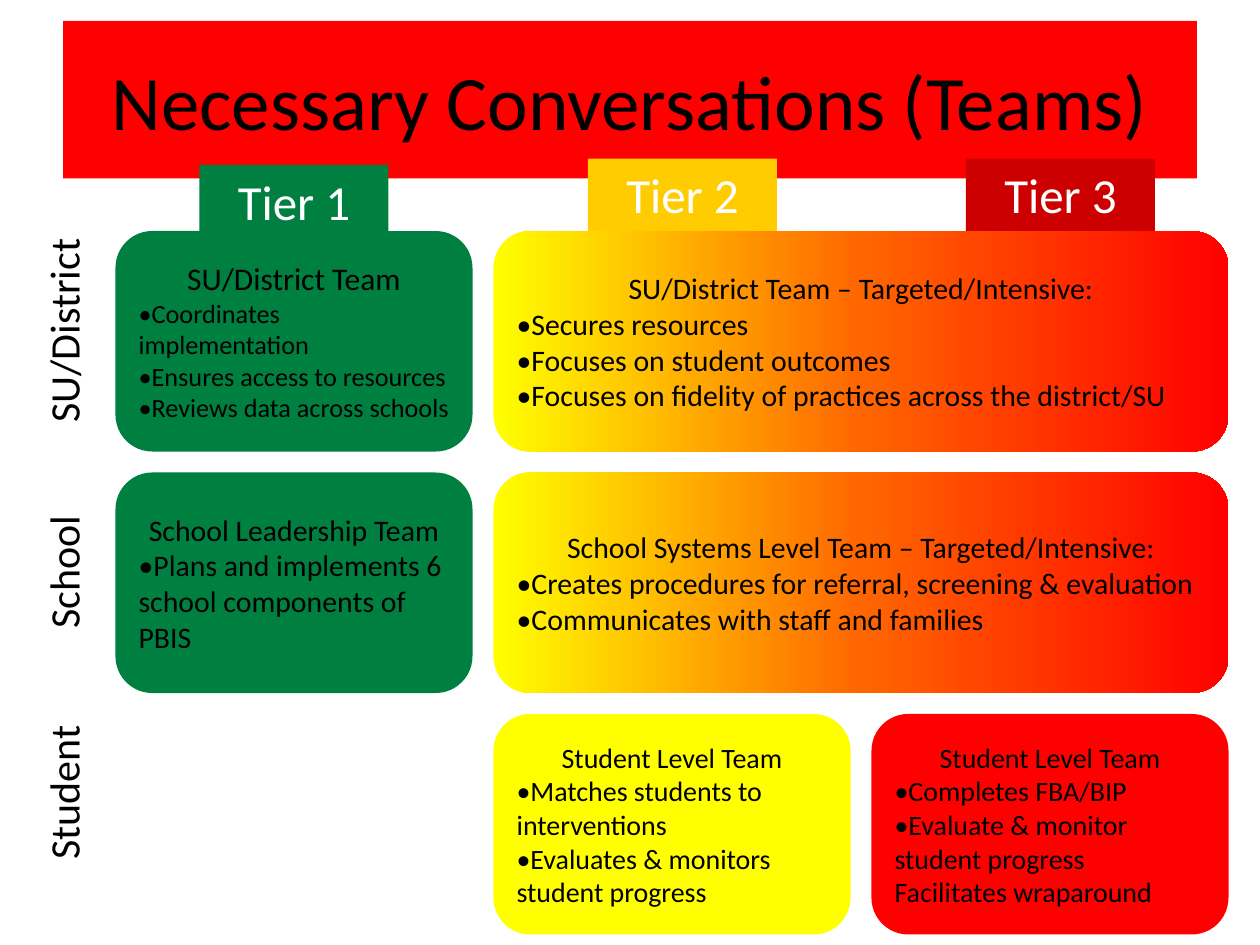
import copy

import pptx
import pptx.util
import pptx.dml.color
import pptx.enum.shapes
import pptx.enum.text
import pptx.oxml.ns

PX = 914400 // 120
FONT = "Calibri"
HUES = {
    "black": "000000", "white": "FFFFFF", "green": "008040", "gold": "FFCC00",
    "crimson": "CC0000", "yellow": "FFFF00", "orange": "FF6600", "red": "FF0000",
}
BLEND = ("yellow", "orange", "red")
KIND = pptx.enum.shapes.MSO_SHAPE
ALIGN = pptx.enum.text.PP_ALIGN
ANCHOR = pptx.enum.text.MSO_ANCHOR
FIT = pptx.enum.text.MSO_AUTO_SIZE

LEFT, TOP = 110, 220
WIDE, HIGH, GAP = 340, 210, 20

# Tab left, tab top, name, fill
TIERS = [
    (920, 151, "Tier 3", "crimson"),
    (560, 151, "Tier 2", "gold"),
    (190, 157, "Tier 1", "green"),
]
LEVELS = [(315, "SU/District"), (545, "School"), (755, "Student")]
# Column, row, columns covered, fill, head size, body size, lines
TEAMS = [
    (0, 0, 1, "green", 18, 15, [
        "SU/District Team", "•Coordinates implementation",
        "•Ensures access to resources", "•Reviews data across schools"]),
    (1, 0, 2, BLEND, 17, 17, [
        "SU/District Team – Targeted/Intensive:", "•Secures resources",
        "•Focuses on student outcomes",
        "•Focuses on fidelity of practices across the district/SU"]),
    (0, 1, 1, "green", 17, 17, [
        "School Leadership Team",
        "•Plans and implements 6 school components of PBIS"]),
    (1, 1, 2, BLEND, 17, 17, [
        "School Systems Level Team – Targeted/Intensive:",
        "•Creates procedures for referral, screening & evaluation",
        "•Communicates with staff and families"]),
    (1, 2, 1, "yellow", 16, 16, [
        "Student Level Team", "•Matches students to interventions",
        "•Evaluates & monitors student progress"]),
    (2, 2, 1, "red", 16, 16, [
        "Student Level Team", "•Completes FBA/BIP",
        "•Evaluate & monitor student progress", "Facilitates wraparound"]),
]


def emu(box):
    return [n * PX for n in box]


def color(name):
    return pptx.dml.color.RGBColor.from_string(HUES[name])


def paint(shape, hue):
    """Fill with one colour, or with an even left-to-right blend of three."""
    fill = shape.fill
    if isinstance(hue, str):
        fill.solid()
        fill.fore_color.rgb = color(hue)
        return
    fill.gradient()
    fill.gradient_angle = 0
    stops = shape._element.spPr.find(".//" + pptx.oxml.ns.qn("a:gsLst"))
    stops.insert(1, copy.deepcopy(stops[0]))
    for i, (stop, name) in enumerate(zip(fill.gradient_stops, hue)):
        stop.position = i / 2
        stop.color.rgb = color(name)


def write(para, text, size, hue="black", align=ALIGN.CENTER):
    para.alignment = align
    run = para.add_run()
    run.text = text
    run.font.name = FONT
    run.font.size = pptx.util.Pt(size)
    run.font.color.rgb = color(hue)


def block(slide, kind, box, hue):
    shape = slide.shapes.add_shape(kind, *emu(box))
    shape.shadow.inherit = False
    shape.line.fill.background()
    paint(shape, hue)
    shape.text_frame.word_wrap = True
    return shape


def banner(slide, box, text):
    title = slide.shapes.title
    title.left, title.top, title.width, title.height = emu(box)
    paint(title, "red")
    title.text_frame.vertical_anchor = ANCHOR.MIDDLE
    write(title.text_frame.paragraphs[0], text, 44)


def tab(slide, box, text, hue):
    frame = block(slide, KIND.RECTANGLE, box, hue).text_frame
    frame.vertical_anchor = ANCHOR.TOP
    frame.auto_size = FIT.SHAPE_TO_FIT_TEXT
    write(frame.paragraphs[0], text, 28, "white")


def card(slide, box, hue, head, body, lines):
    frame = block(slide, KIND.ROUNDED_RECTANGLE, box, hue).text_frame
    frame.vertical_anchor = ANCHOR.MIDDLE
    write(frame.paragraphs[0], lines[0], head)
    for line in lines[1:]:
        write(frame.add_paragraph(), line, body, align=ALIGN.LEFT)


def label(slide, box, text):
    shape = slide.shapes.add_textbox(*emu(box))
    shape.rotation = 270
    frame = shape.text_frame
    frame.word_wrap = True
    frame.auto_size = FIT.SHAPE_TO_FIT_TEXT
    write(frame.paragraphs[0], text, 24)


def main():
    deck = pptx.Presentation()
    deck.slide_width, deck.slide_height = emu((1200, 900))
    slide = deck.slides.add_slide(deck.slide_layouts[5])
    banner(slide, (60, 20, 1080, 150), "Necessary Conversations (Teams)")
    for col, row, span, hue, head, body, lines in TEAMS:
        box = (LEFT + col * (WIDE + GAP), TOP + row * (HIGH + GAP),
               span * WIDE + (span - 1) * GAP, HIGH)
        card(slide, box, hue, head, body, lines)
    for x, y, text, hue in TIERS:
        tab(slide, (x, y, 180, 69), text, hue)
    for mid, text in LEVELS:
        label(slide, (-45, mid - 30, HIGH, 60), text)
    deck.save("out.pptx")


if __name__ == "__main__":
    main()
